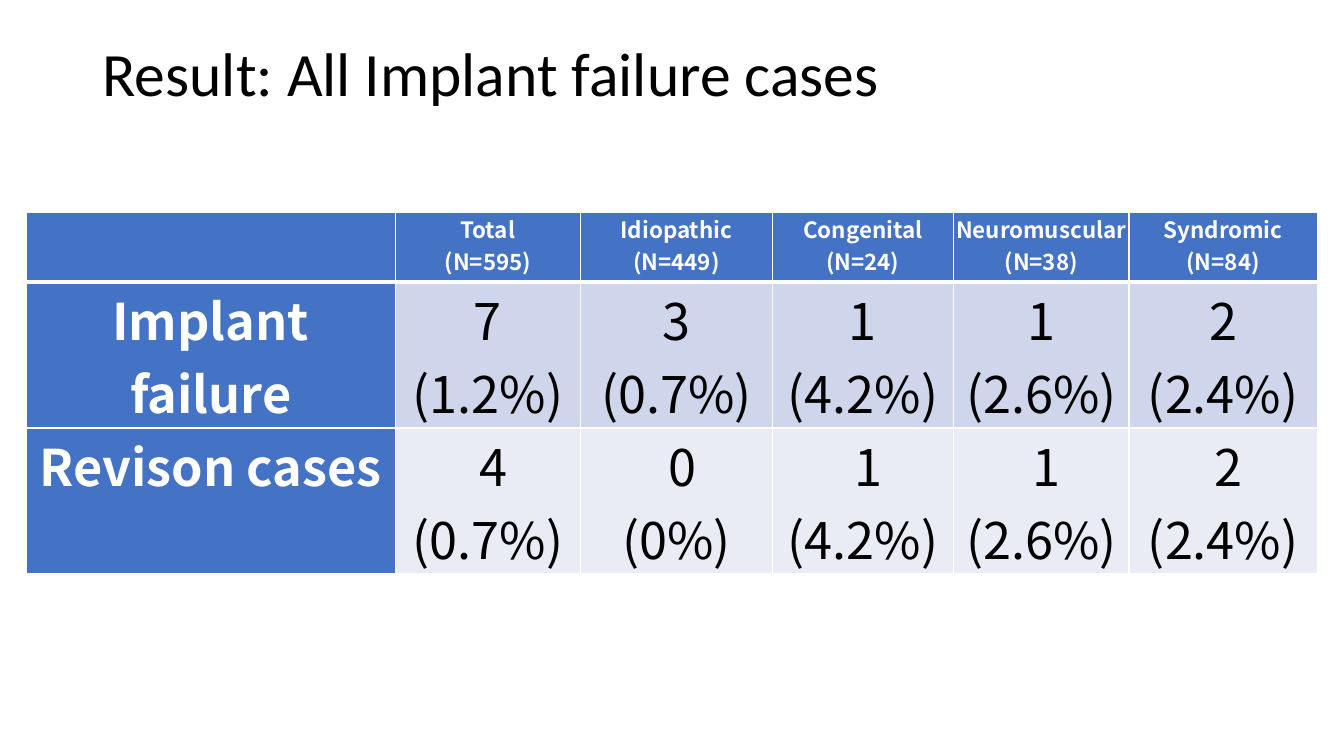
from dataclasses import dataclass

from lxml.etree import SubElement
from pptx import Presentation
from pptx.dml.color import RGBColor
from pptx.enum.text import MSO_ANCHOR, MSO_AUTO_SIZE, PP_ALIGN
from pptx.oxml.ns import qn
from pptx.util import Cm, Pt


@dataclass(frozen=True)
class Theme:
    title_font: str = "Calibri"
    table_font: str = "Noto Sans CJK JP"
    black: str = "000000"
    white: str = "FFFFFF"
    blue: str = "4472C4"
    bands: tuple = ("CFD5EA", "E9EBF5")
    title_size: int = 44
    header_size: int = 16
    body_size: int = 36
    thin: int = 1
    thick: int = 3


HEADER = ["", "Total\n(N=595)", "Idiopathic\n(N=449)", "Congenital\n(N=24)",
          "Neuromuscular\n(N=38)", "Syndromic\n(N=84)"]
BODY = [
    ["Implant failure", "7\n(1.2%)", "3\n(0.7%)", "1\n(4.2%)", "1\n(2.6%)", "2\n(2.4%)"],
    ["Revison cases", " 4\n(0.7%)", " 0\n(0%)", " 1\n(4.2%)", " 1\n(2.6%)", " 2\n(2.4%)"],
]
COLUMN_WIDTHS = [9.3, 4.67, 4.83, 4.57, 4.42, 4.75]
ROW_HEIGHTS = [1.75, 1.8, 3.5]


def set_attributes(target, values):
    for name, value in values.items():
        setattr(target, name, value)


class SlideBuilder:
    def __init__(self, prs, theme):
        self.theme = theme
        self.s = prs.slides.add_slide(prs.slide_layouts[5])

    def add_text(self, tf, text, align, font, color, line_spacing=1.0):
        """Fill a text frame with one paragraph per line of text."""
        for i, line in enumerate(text.split("\n")):
            p = tf.add_paragraph() if i else tf.paragraphs[0]
            set_attributes(p, {"alignment": align, "line_spacing": line_spacing})
            r = p.add_run()
            r.text = line
            set_attributes(r.font, font)
            r.font.color.rgb = RGBColor.from_string(color)

    def title(self, text, left, top, width, height):
        sp = self.s.shapes.title
        set_attributes(sp, {"left": Cm(left), "top": Cm(top),
                            "width": Cm(width), "height": Cm(height)})
        set_attributes(sp.text_frame, {"vertical_anchor": MSO_ANCHOR.MIDDLE,
                                       "word_wrap": True,
                                       "auto_size": MSO_AUTO_SIZE.NONE})
        font = {"name": self.theme.title_font, "size": Pt(self.theme.title_size)}
        self.add_text(sp.text_frame, text, PP_ALIGN.LEFT, font, self.theme.black, 0.9)

    def borders(self, cell, top, bottom):
        tcPr = cell._tc.get_or_add_tcPr()
        widths = {"lnL": self.theme.thin, "lnR": self.theme.thin, "lnT": top, "lnB": bottom}
        for tag, width in widths.items():
            ln = SubElement(tcPr, qn(f"a:{tag}"), w=str(Pt(width)))
            fill = SubElement(ln, qn("a:solidFill"))
            SubElement(fill, qn("a:srgbClr"), val=self.theme.white)

    def cell(self, cell, text, row, column):
        th = self.theme
        is_label = row == 0 or column == 0
        self.borders(cell, th.thick if row == 1 else th.thin,
                     th.thick if row == 0 else th.thin)
        cell.fill.solid()
        fill = th.blue if is_label else th.bands[(row - 1) % 2]
        cell.fill.fore_color.rgb = RGBColor.from_string(fill)
        if not text:
            return
        set_attributes(cell, {"margin_left": Cm(0.04), "margin_right": Cm(0.04),
                              "margin_top": 0, "margin_bottom": 0})
        font = {"name": th.table_font, "bold": is_label,
                "size": Pt(th.body_size if row else th.header_size)}
        self.add_text(cell.text_frame, text, PP_ALIGN.CENTER, font,
                      th.white if is_label else th.black)

    def table(self, rows, left, top, widths, heights):
        frame = self.s.shapes.add_table(len(rows), len(widths), Cm(left), Cm(top),
                                        Cm(sum(widths)), Cm(sum(heights)))
        table = frame.table
        for column, width in zip(table.columns, widths):
            column.width = Cm(width)
        for row, height in zip(table.rows, heights):
            row.height = Cm(height)
        for i, texts in enumerate(rows):
            for j, text in enumerate(texts):
                self.cell(table.cell(i, j), text, i, j)


def main():
    prs = Presentation()
    set_attributes(prs, {"slide_width": Cm(33.87), "slide_height": Cm(19.05)})
    slide = SlideBuilder(prs, Theme())
    slide.title("Result: All Implant failure cases", 2.33, 0.1, 29.2, 3.68)
    slide.table([HEADER, *BODY], 0.66, 5.36, COLUMN_WIDTHS, ROW_HEIGHTS)
    prs.save("out.pptx")


if __name__ == "__main__":
    main()
